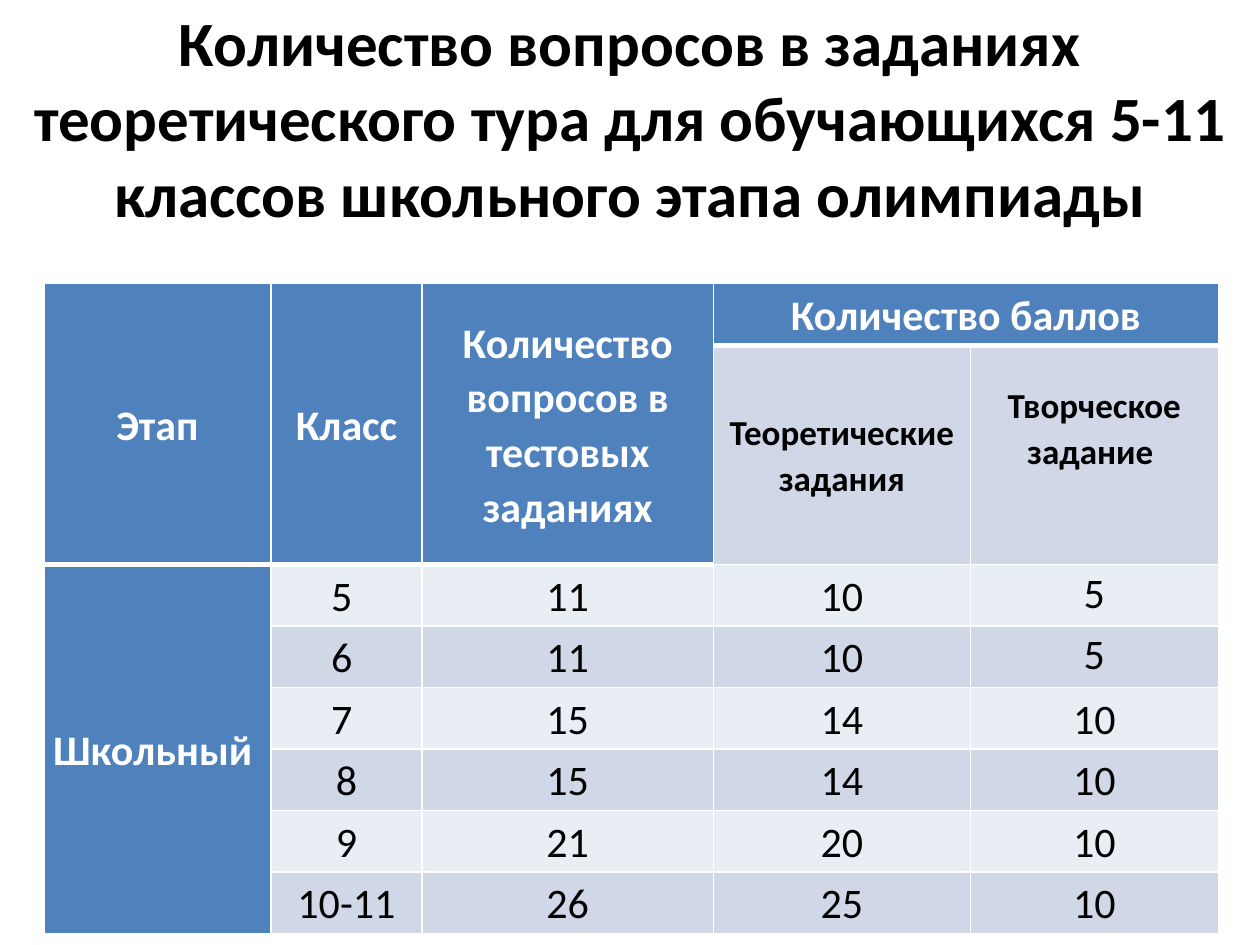
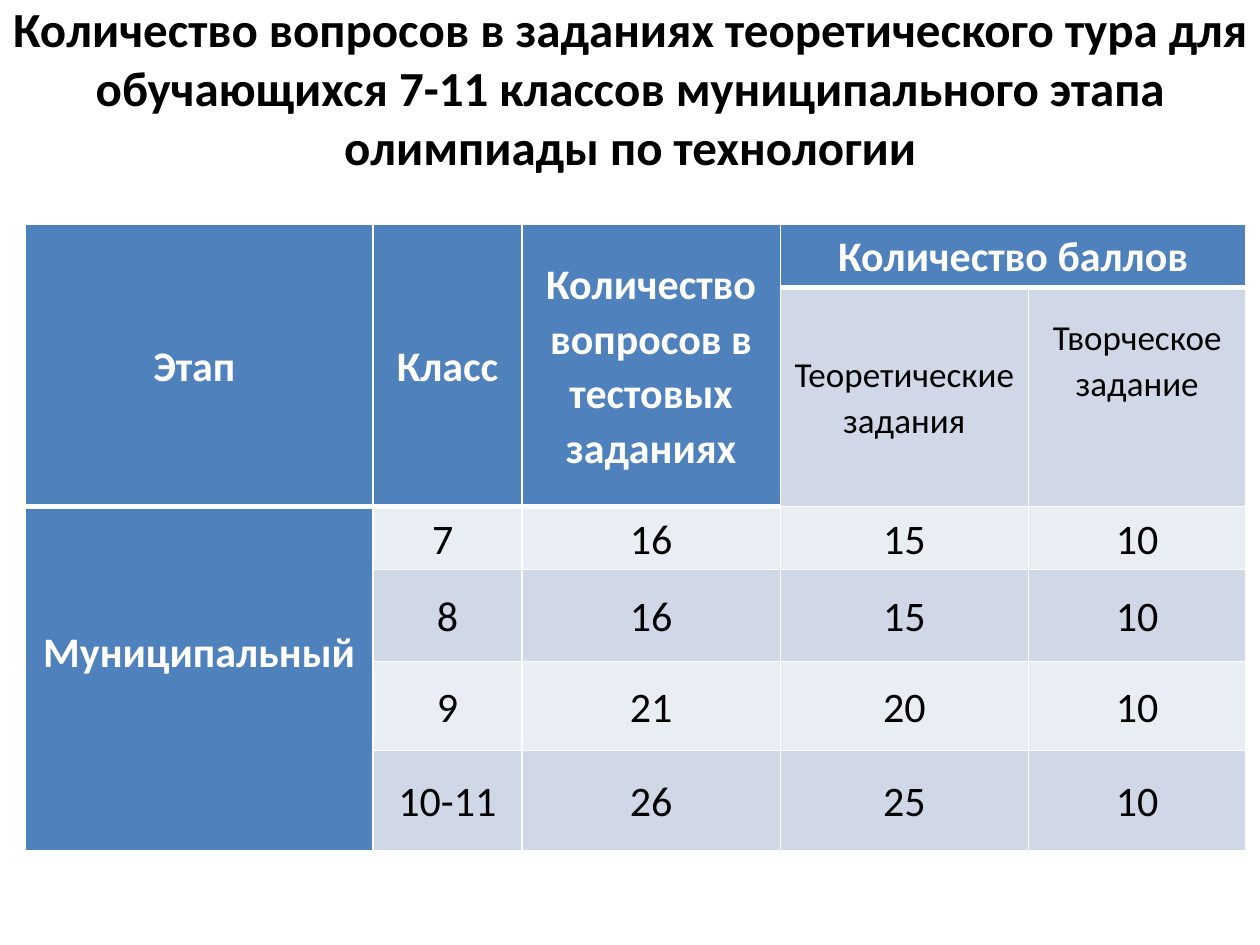
from dataclasses import dataclass

from lxml import etree
from pptx import Presentation
from pptx import util as u
from pptx.dml.color import RGBColor
from pptx.enum import text
from pptx.oxml import ns

TITLE_ONLY = 5
STAGE_COLUMN, CREATIVE_COLUMN = 0, 4
HEADINGS = ["Класс", "Количество вопросов в тестовых заданиях", "Количество баллов"]


@dataclass(frozen=True)
class Theme:
    font: str = "Calibri"
    ink: str = "000000"
    paper: str = "FFFFFF"
    header: str = "4F81BD"
    dark_band: str = "D0D8E8"
    light_band: str = "E9EDF4"
    body_size: int = 24
    subheading_size: int = 20
    line_spacing: float = 1.07
    thin_line: float = 1
    thick_line: float = 3


def is_header(row, column):
    return row == 0 or (row == 1 and column < 3)


def write(frame, content, *, theme, size, color, bold, spacing=None):
    frame.word_wrap = True
    paragraph = frame.paragraphs[0]
    paragraph.alignment = text.PP_ALIGN.CENTER
    paragraph.line_spacing = spacing
    run = paragraph.add_run()
    run.text = content
    font = run.font
    font.name, font.size, font.bold = theme.font, u.Pt(size), bold
    font.color.rgb = RGBColor.from_string(color)


def set_borders(cell, color, **widths):
    """Draw cell borders; widths are points keyed by L, R, T and B, in that order."""
    properties = cell._tc.get_or_add_tcPr()
    for position, (side, width) in enumerate(widths.items()):
        line = etree.Element(ns.qn(f"a:ln{side}"), w=str(u.Pt(width)))
        fill = etree.SubElement(line, ns.qn("a:solidFill"))
        etree.SubElement(fill, ns.qn("a:srgbClr"), val=color)
        properties.insert(position, line)


class Deck:
    def __init__(self, theme):
        self.theme = theme
        self.presentation = Presentation()
        self.presentation.slide_width = u.Cm(25.4)
        self.presentation.slide_height = u.Cm(19.05)
        self.slide = None

    def add_slide(self):
        layout = self.presentation.slide_layouts[TITLE_ONLY]
        self.slide = self.presentation.slides.add_slide(layout)
        self.slide.background.fill.solid()
        self.slide.background.fill.fore_color.rgb = RGBColor.from_string(self.theme.paper)

    def title(self, content, size, bottom_margin=0.13):
        shape = self.slide.shapes.title
        shape.left, shape.top = u.Cm(0), u.Cm(0.76)
        shape.width, shape.height = u.Cm(25.4), u.Cm(3.18)
        frame = shape.text_frame
        frame.auto_size = text.MSO_AUTO_SIZE.NONE
        frame.vertical_anchor = text.MSO_ANCHOR.MIDDLE
        frame.margin_bottom = u.Cm(bottom_margin)
        write(frame, content, theme=self.theme, size=size, color=self.theme.ink, bold=True)

    def cell(self, table, row, column, content="", *, size=None, bold=False,
             anchor=text.MSO_ANCHOR.MIDDLE, top=0, bottom=0):
        theme = self.theme
        header = is_header(row, column)
        strong = header or column == STAGE_COLUMN
        cell = table.cell(row, column)
        cell.margin_left = cell.margin_right = u.Cm(0.18)
        cell.margin_top, cell.margin_bottom = u.Cm(top), u.Cm(bottom)
        cell.vertical_anchor = anchor
        band = theme.dark_band if row % 2 else theme.light_band
        cell.fill.solid()
        cell.fill.fore_color.rgb = RGBColor.from_string(theme.header if strong else band)
        below_header = row > 0 and is_header(row - 1, column)
        set_borders(cell, theme.paper, L=theme.thin_line, R=theme.thin_line,
                    T=theme.thick_line if below_header else theme.thin_line,
                    B=theme.thick_line if header else theme.thin_line)
        if content:
            write(cell.text_frame, content, theme=theme, size=size or theme.body_size,
                  color=theme.paper if strong else theme.ink,
                  bold=strong or bold, spacing=theme.line_spacing)

    def score_table(self, left, top, widths, heights, *, stage_heading, stage, creative,
                    scores, subheadings_bold=False, creative_top=0.0, stage_bottom=0.0,
                    top_aligned_rows=()):
        frame = self.slide.shapes.add_table(
            len(heights), len(widths), u.Cm(left), u.Cm(top),
            u.Cm(sum(widths)), u.Cm(sum(heights)))
        table = frame.table
        for column, width in zip(table.columns, widths):
            column.width = u.Cm(width)
        for row, height in zip(table.rows, heights):
            row.height = u.Cm(height)

        contents = [[stage_heading, *HEADINGS, ""],
                    ["", "", "", "Теоретические задания", creative]]
        contents += [["", *values] for values in scores]
        contents[2][STAGE_COLUMN] = stage
        for row, values in enumerate(contents):
            for column, content in enumerate(values):
                options = {}
                if row == 1:
                    options = dict(size=self.theme.subheading_size, bold=subheadings_bold)
                if column == CREATIVE_COLUMN and row in (1, *top_aligned_rows):
                    options["anchor"] = text.MSO_ANCHOR.TOP
                    options["top"] = creative_top if row == 1 else 0
                if column == STAGE_COLUMN and row == 2:
                    options["bottom"] = stage_bottom
                self.cell(table, row, column, content, **options)

        for column in range(3):
            table.cell(0, column).merge(table.cell(1, column))
        table.cell(0, 3).merge(table.cell(0, CREATIVE_COLUMN))
        table.cell(2, STAGE_COLUMN).merge(table.cell(len(heights) - 1, STAGE_COLUMN))


def school_stage(deck):
    deck.add_slide()
    deck.title("Количество вопросов в заданиях теоретического тура для обучающихся "
               "5-11 классов школьного этапа олимпиады", size=36)
    deck.score_table(
        0.89, 5.72, [4.57, 3.05, 5.87, 5.18, 5.0], [1.24, 2.54] + [1.24] * 6,
        stage_heading="Этап", stage="Школьный ", creative="Творческое задание ",
        scores=[("5 ", "11", "10", "5"),
                ("6 ", "11", "10", "5"),
                ("7 ", "15", "14", "10"),
                ("8", "15", "14", "10"),
                ("9", "21", "20", "10"),
                ("10-11", "26", "25", "10")],
        subheadings_bold=True, creative_top=0.74, top_aligned_rows=(2, 3))


def municipal_stage(deck):
    deck.add_slide()
    deck.title("Количество вопросов в заданиях теоретического тура для обучающихся "
               "7-11 классов муниципального этапа олимпиады по технологии",
               size=28, bottom_margin=1.33)
    deck.score_table(
        0.51, 4.52, [7.01, 3.0, 5.21, 5.0, 4.39], [1.27, 2.74, 1.27, 1.85, 1.8, 2.03],
        stage_heading="Этап ", stage="Муниципальный", creative="Творческое задание",
        scores=[("7 ", "16", "15", "10"),
                ("8", "16", "15", "10"),
                ("9", "21", "20", "10"),
                ("10-11", "26", "25", "10")],
        creative_top=0.55, stage_bottom=1.1)


def main():
    deck = Deck(Theme())
    school_stage(deck)
    municipal_stage(deck)
    deck.presentation.save("out.pptx")


if __name__ == "__main__":
    main()
